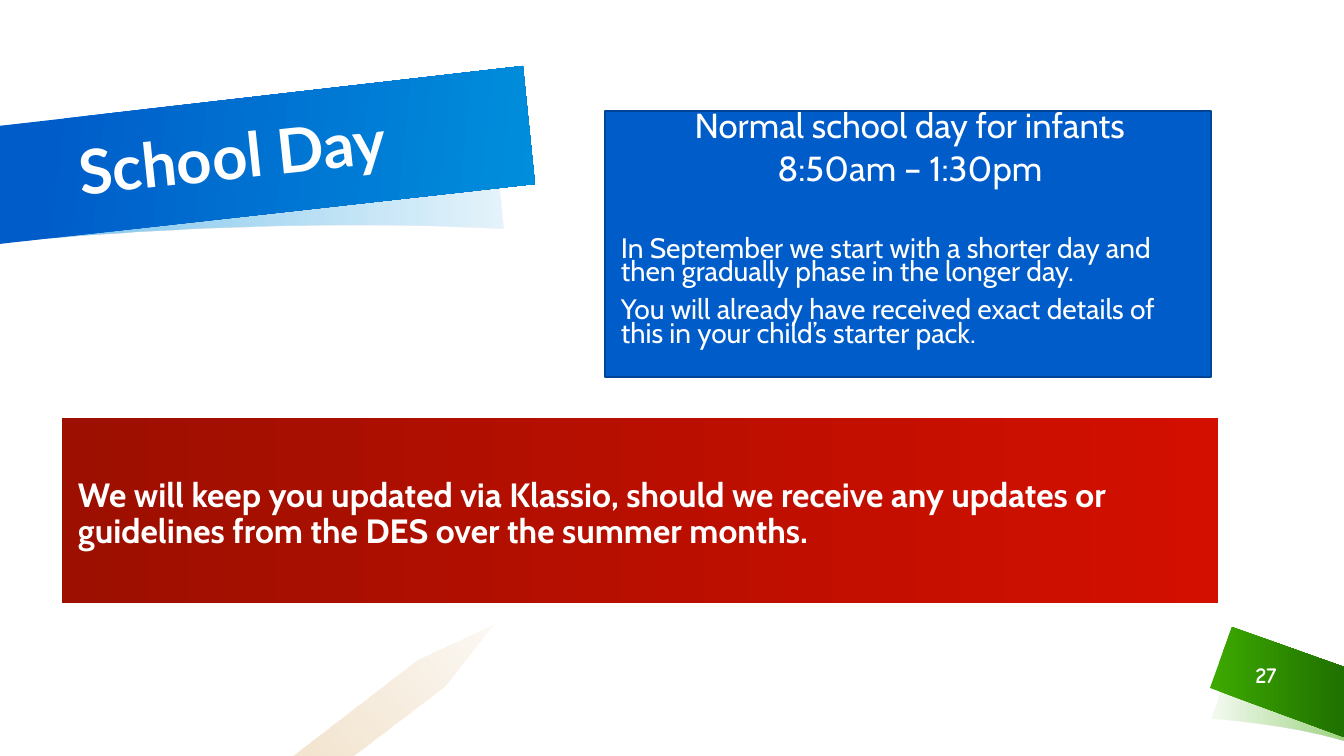
from lxml.etree import SubElement
from pptx import Presentation
from pptx.dml.color import RGBColor
from pptx.enum.shapes import MSO_SHAPE
from pptx.enum.text import MSO_ANCHOR, PP_ALIGN
from pptx.oxml.ns import qn
from pptx.util import Emu, Pt

SCALE = 914400 / 100.8
CURVE_STEPS = 24

WHITE = RGBColor(0xFF, 0xFF, 0xFF)
BLUE = RGBColor(0x00, 0x5C, 0xC9)
BLUE_EDGE = RGBColor(0x00, 0x44, 0x95)
SKY = RGBColor(0x00, 0x8E, 0xDC)
GREEN = RGBColor(0x3D, 0xA8, 0x00)
DARK_GREEN = RGBColor(0x1F, 0x71, 0x00)
RED = RGBColor(0xD3, 0x0F, 0x00)
DARK_RED = RGBColor(0x9D, 0x0F, 0x00)
WOOD = RGBColor(0xC0, 0x74, 0x00)


def px(length):
    return Emu(round(length * SCALE))


def apply_gradient(shape, stops, angle=0):
    """Fill with two (percent, colour, opacity) stops; angle runs clockwise."""
    shape.fill.gradient()
    shape.fill.gradient_angle = -angle % 360
    for stop, (percent, color, _) in zip(shape.fill.gradient_stops, stops):
        stop.position = percent / 100
        stop.color.rgb = color
    for color_node, (_, _, opacity) in zip(shape._element.spPr.iter(qn("a:srgbClr")), stops):
        if opacity < 100:
            SubElement(color_node, qn("a:alpha")).set("val", str(opacity * 1000))


def curve(*controls):
    """Points along a cubic Bezier, including both ends."""
    weights = (1, 3, 3, 1)
    points = []
    for step in range(CURVE_STEPS + 1):
        t = step / CURVE_STEPS
        points.append(tuple(
            sum(w * (1 - t) ** (3 - i) * t ** i * control[axis]
                for i, (w, control) in enumerate(zip(weights, controls)))
            for axis in (0, 1)))
    return points


def add_outline(slide, left, top, points, stops, angle=0):
    corners = [(px(left + x), px(top + y)) for x, y in points]
    builder = slide.shapes.build_freeform(*corners[0], scale=1.0)
    builder.add_line_segments(corners[1:], close=True)
    outline = builder.convert_to_shape()
    outline.shadow.inherit = False
    outline.line.fill.background()
    apply_gradient(outline, stops, angle)


def write_text(shape, paragraphs, font, margins=(10, 5, 10, 5), anchor=MSO_ANCHOR.MIDDLE):
    """Write (text, size, paragraph format) entries in one font."""
    frame = shape.text_frame
    frame.word_wrap = True
    frame.vertical_anchor = anchor
    for side, margin in zip(("left", "top", "right", "bottom"), margins):
        setattr(frame, f"margin_{side}", px(margin))
    for index, (text, size, layout) in enumerate(paragraphs):
        paragraph = frame.add_paragraph() if index else frame.paragraphs[0]
        paragraph.text = text
        for key, value in {"alignment": PP_ALIGN.LEFT, **layout}.items():
            setattr(paragraph, key, value)
        for key, value in {**font, "size": Pt(size)}.items():
            setattr(paragraph.font, key, value)
        paragraph.font.color.rgb = WHITE


def add_panel(slide, left, top, width, height):
    panel = slide.shapes.add_shape(
        MSO_SHAPE.RECTANGLE, px(left), px(top), px(width), px(height))
    panel.shadow.inherit = False
    panel.line.fill.background()
    return panel


def add_page_corner(slide, left, top, number):
    shade = [*curve((2, 92), (2, 92), (78, 97), (134, 114)),
             *curve((134, 46), (73, 29), (24, 30), (24, 30))]
    add_outline(slide, left, top, shade, [(3, GREEN, 6), (100, GREEN, 50)])
    add_outline(slide, left, top, [(134, 40), (22, 0), (0, 61), (134, 110)],
                [(3, GREEN, 100), (100, DARK_GREEN, 100)])
    page = slide.shapes.add_textbox(px(left + 21), px(top + 28), px(70), px(40))
    write_text(page, [(number, 16, {"alignment": PP_ALIGN.CENTER})],
               {"name": "Comic Neue", "bold": True})


def add_title_ribbon(slide, left, top, title):
    shade = [(503, 163), *curve((491, 48), (491, 48), (315, 29), (-2, 60)),
             *curve((-2, 177), (288, 148), (503, 163), (503, 163))]
    add_outline(slide, left, top, shade, [(0, SKY, 10), (88, SKY, 50)], 180)
    add_outline(slide, left, top, [(-1, 178), (535, 118), (523, 0), (-1, 60)],
                [(9, BLUE, 100), (100, SKY, 100)], 6)
    heading = slide.shapes.add_textbox(px(left + 68), px(top + 28), px(462), px(117))
    heading.rotation = -6
    write_text(heading, [(title, 44, {"line_spacing": 0.9})],
               {"name": "Lato", "bold": True})


def add_pencil(slide, left, top):
    add_outline(slide, left, top, [(202, 0), (126, 35), (0, 131), (61, 131), (153, 62)],
                [(0, WOOD, 5), (100, WOOD, 20)], 139)


def add_hours_panel(slide, left, top, width, height):
    hours = add_panel(slide, left, top, width, height)
    hours.fill.solid()
    hours.fill.fore_color.rgb = BLUE
    hours.line.color.rgb = BLUE_EDGE
    hours.line.width = Pt(1)
    tight = {"line_spacing": 0.7}
    spaced = {**tight, "space_before": Pt(10)}
    section = {**tight, "space_before": Pt(37)}
    centered = {"alignment": PP_ALIGN.CENTER}
    write_text(hours, [
        ("Normal school day for infants", 24.8, {**tight, **centered}),
        ("8:50am – 1:30pm", 24.8, {**spaced, **centered}),
        ("In September we start with a shorter day and then gradually phase in "
         "the longer day.", 20.1, section),
        ("You will already have received exact details of this in your child’s "
         "starter pack.", 20.1, spaced),
    ], {"name": "Cabin"}, (16, 4, 12, 12), MSO_ANCHOR.TOP)


def add_updates_panel(slide, left, top, width, height):
    updates = add_panel(slide, left, top, width, height)
    apply_gradient(updates, [(0, RED, 100), (100, DARK_RED, 100)], 180)
    write_text(updates, [
        ("We will keep you updated via Klassio, should we receive any updates or "
         "guidelines from the DES over the summer months.", 24, {"line_spacing": 0.9}),
    ], {"name": "Cabin", "bold": True}, (16, 20, 12, 12))


def main():
    deck = Presentation()
    deck.slide_width, deck.slide_height = px(1344), px(756)
    slide = deck.slides.add_slide(deck.slide_layouts[6])
    add_title_ribbon(slide, 0, 66, "School Day")
    add_pencil(slide, 292, 625)
    add_hours_panel(slide, 605, 111, 606, 266)
    add_page_corner(slide, 1210, 627, "27")
    add_updates_panel(slide, 62, 418, 1156, 185)
    deck.save("out.pptx")


if __name__ == "__main__":
    main()
